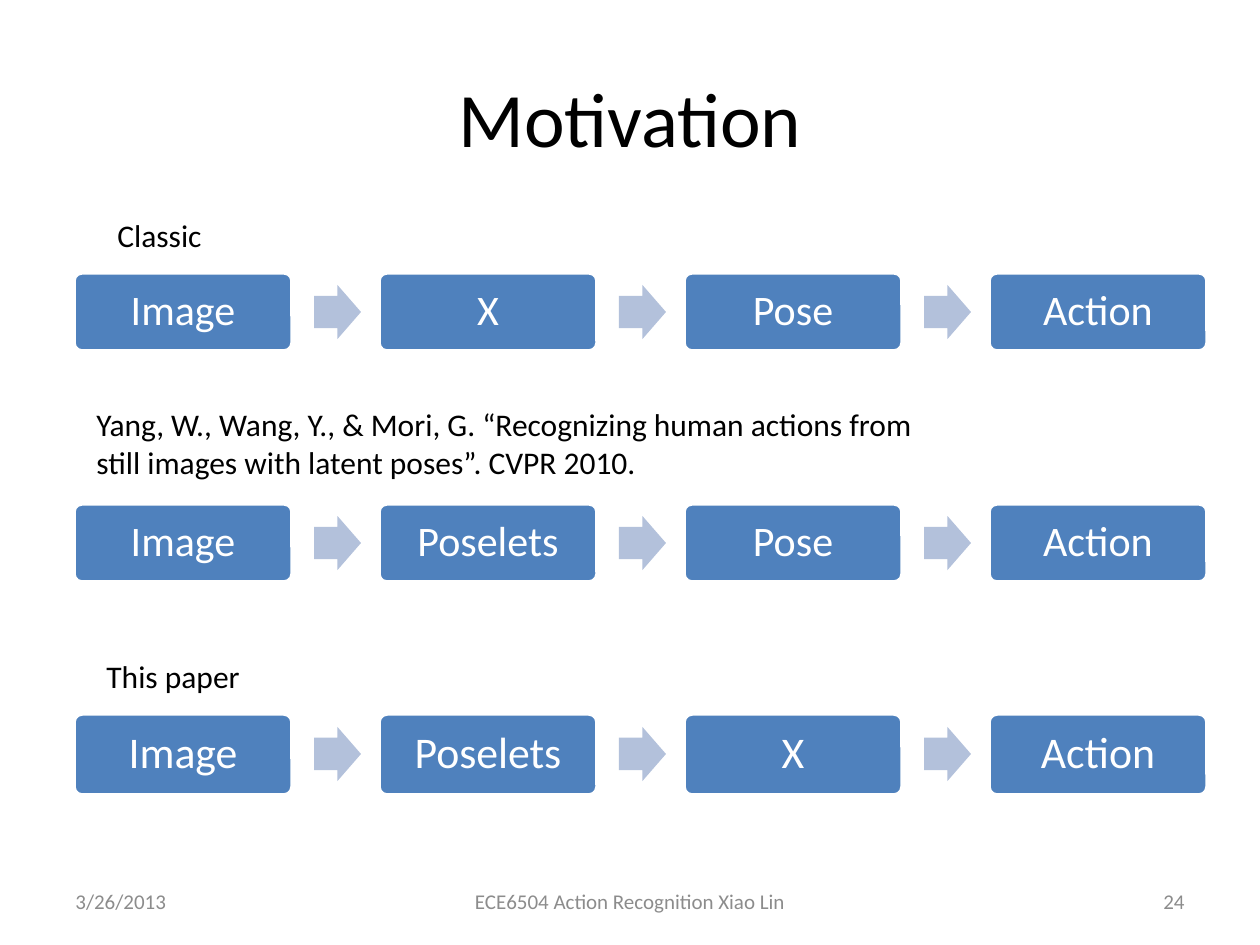
import dataclasses

import pptx
import pptx.dml.color
import pptx.enum.shapes
import pptx.enum.text
import pptx.util

SHAPE = pptx.enum.shapes.MSO_SHAPE
ALIGN = pptx.enum.text.PP_ALIGN
ANCHOR = pptx.enum.text.MSO_ANCHOR
EMU_PER_PX = 914400 / 126


def px(length):
    return pptx.util.Emu(round(length * EMU_PER_PX))


@dataclasses.dataclass(frozen=True)
class Theme:
    font: str = "Calibri"
    ink: str = "000000"
    paper: str = "FFFFFF"
    box: str = "4F81BD"
    arrow: str = "B3C1DB"
    muted: str = "8C8C8C"
    title_size: int = 44
    label_size: int = 18
    footer_size: int = 12
    outline: int = 2


class SlideBuilder:
    def __init__(self, slide, theme):
        self.slide = slide
        self.theme = theme

    def color(self, value):
        return pptx.dml.color.RGBColor.from_string(value)

    def set_text(self, shape, text, size, color, align, anchor):
        frame = shape.text_frame
        frame.text = text
        frame.word_wrap = True
        frame.vertical_anchor = anchor
        paragraph = frame.paragraphs[0]
        paragraph.alignment = align
        font = paragraph.runs[0].font
        font.name = self.theme.font
        font.size = pptx.util.Pt(size)
        font.color.rgb = self.color(color)
        return paragraph

    def text(self, text, left, top, width, height, size, color,
             align=ALIGN.LEFT, anchor=ANCHOR.MIDDLE):
        shape = self.slide.shapes.add_textbox(px(left), px(top), px(width), px(height))
        self.set_text(shape, text, size, color, align, anchor)

    def shape(self, kind, left, top, width, height, fill, adjustments):
        shape = self.slide.shapes.add_shape(kind, px(left), px(top), px(width), px(height))
        shape.shadow.inherit = False
        shape.fill.solid()
        shape.fill.fore_color.rgb = self.color(fill)
        for index, value in enumerate(adjustments):
            shape.adjustments[index] = value
        return shape

    def box(self, text, left, top, width, height, size):
        shape = self.shape(SHAPE.ROUNDED_RECTANGLE, left, top, width, height,
                           self.theme.box, [0.1])
        shape.line.color.rgb = self.color(self.theme.paper)
        shape.line.width = pptx.util.Pt(self.theme.outline)
        paragraph = self.set_text(shape, text, size, self.theme.paper,
                                  ALIGN.CENTER, ANCHOR.MIDDLE)
        paragraph.line_spacing = 0.9

    def arrow(self, left, top, width, height):
        shape = self.shape(SHAPE.RIGHT_ARROW, left, top, width, height,
                           self.theme.arrow, [0.6, 0.5])
        shape.line.fill.background()

    def process(self, steps, top, height, size):
        left, pitch, box_width = 74, 305, 218
        arrow_offset, arrow_width, arrow_height = 240, 47, 54
        for index, step in enumerate(steps):
            step_left = left + index * pitch
            self.box(step, step_left, top, box_width, height, size)
            if index < len(steps) - 1:
                self.arrow(step_left + arrow_offset, top + (height - arrow_height) // 2,
                           arrow_width, arrow_height)


def main():
    presentation = pptx.Presentation()
    presentation.slide_width = px(1260)
    presentation.slide_height = px(945)
    theme = Theme()
    slide = presentation.slides.add_slide(presentation.slide_layouts[6])
    builder = SlideBuilder(slide, theme)

    # Title
    builder.text("Motivation", 63, 38, 1134, 158, theme.title_size, theme.ink, ALIGN.CENTER)

    # Approaches: label and its place, then steps, top, height and type size
    citation = ("Yang, W., Wang, Y., & Mori, G. “Recognizing human actions from "
                "still images with latent poses”. CVPR 2010.")
    approaches = [
        ("Classic", (105, 210, 199, 50),
         ["Image", "X", "Pose", "Action"], 273, 78, 24),
        (citation, (84, 399, 872, 89),
         ["Image", "Poselets", "Pose", "Action"], 504, 78, 24),
        ("This paper", (94, 651, 231, 50),
         ["Image", "Poselets", "X", "Action"], 714, 81, 25),
    ]
    for label, place, steps, top, height, size in approaches:
        builder.text(label, *place, theme.label_size, theme.ink, anchor=ANCHOR.TOP)
        builder.process(steps, top, height, size)

    # Footer
    footer = [
        ("3/26/2013", 63, 294, ALIGN.LEFT),
        ("ECE6504 Action Recognition Xiao Lin", 430, 400, ALIGN.CENTER),
        ("24", 903, 294, ALIGN.RIGHT),
    ]
    for text, left, width, align in footer:
        builder.text(text, left, 876, width, 50, theme.footer_size, theme.muted, align)

    presentation.save("out.pptx")


if __name__ == "__main__":
    main()
